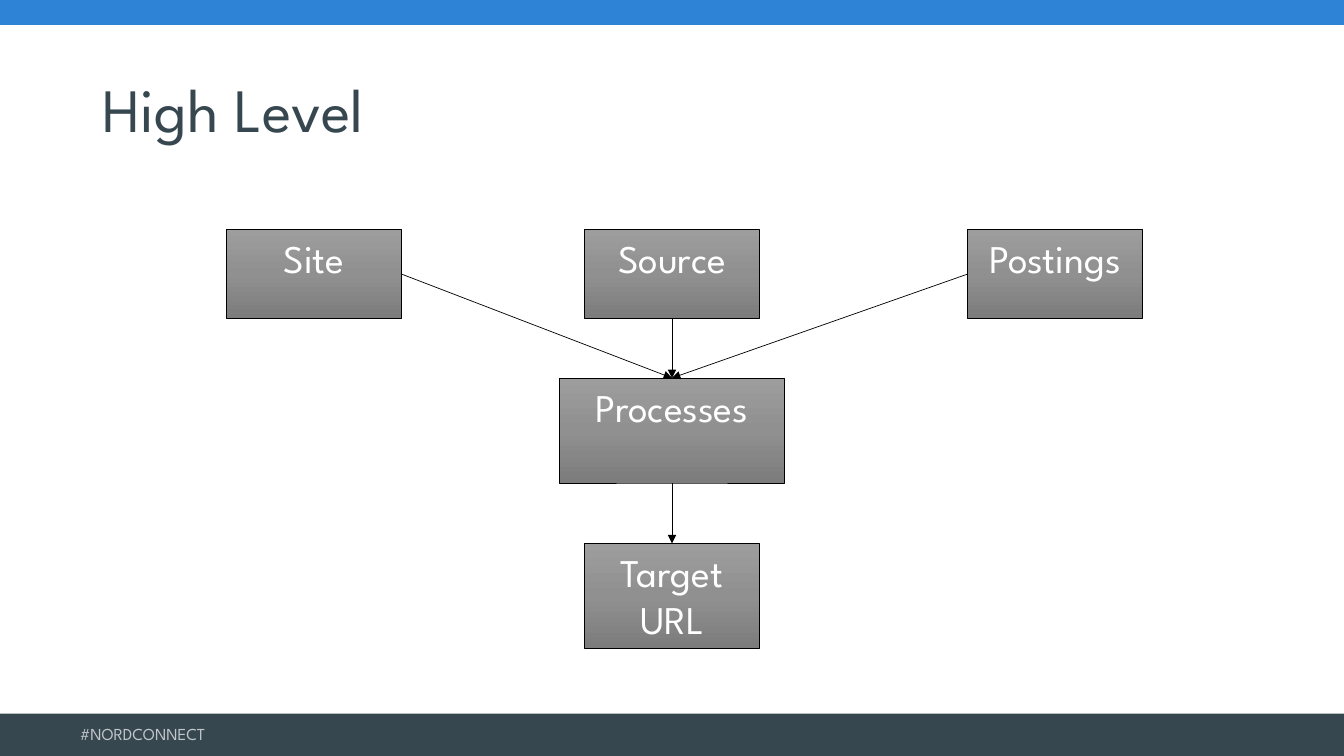
from copy import deepcopy
from pptx import Presentation
from pptx.dml.color import RGBColor
from pptx.enum.shapes import MSO_CONNECTOR as Line, MSO_SHAPE as Kind
from pptx.enum.text import MSO_ANCHOR as Anchor, PP_ALIGN as Align
from pptx.oxml.ns import qn
from pptx.oxml.xmlchemy import OxmlElement as Node
from pptx.util import Inches, Pt

WIDE, HIGH = 13.33, 7.5
FONT = "League Spartan"
GREYS = ("9D9D9D", "909090", "7C7C7C")
LEFT, MID, RIGHT = 3.115 / WIDE, 0.5, 10.465 / WIDE
TOP, CORE, BASE = 2.28 / HIGH, 0.5, 5.39 / HIGH
SLIM, BROAD = 0.13, 0.167
SHORT, TALL = 0.117, 0.139


def hue(code):
    return RGBColor.from_string(code)


def area(x, y, w, h):
    return [Inches(n) for n in (x * WIDE, y * HIGH, w * WIDE, h * HIGH)]


def style(frame, size, code, align, anchor):
    frame.word_wrap = True
    frame.vertical_anchor = anchor
    for para in frame.paragraphs:
        para.alignment = align
        for run in para.runs:
            run.font.name = FONT
            run.font.size = Pt(size)
            run.font.color.rgb = hue(code)


def add_rect(slide, x, y, w, h):
    rect = slide.shapes.add_shape(Kind.RECTANGLE, *area(x, y, w, h))
    rect.shadow.inherit = False
    return rect


def add_band(slide, y, h, code):
    band = add_rect(slide, 0, y, 1, h)
    band.fill.solid()
    band.fill.fore_color.rgb = hue(code)
    band.line.fill.background()


def add_tag(slide, text):
    tag = slide.shapes.add_textbox(*area(0.052, 0.944, 0.169, 0.053))
    tag.text_frame.text = text
    style(tag.text_frame, 12, "C3C7CA", Align.LEFT, Anchor.MIDDLE)


def set_title(slide, text):
    title = slide.shapes.title
    title.left, title.top, title.width, title.height = area(0.069, 0.053, 0.863, 0.193)
    title.text_frame.text = text
    title.text_frame.paragraphs[0].line_spacing = 0.9
    style(title.text_frame, 44, "37474F", Align.LEFT, Anchor.MIDDLE)


def shade(shape):
    shape.fill.gradient()
    shape.fill.gradient_angle = 270
    stops = shape._element.spPr.find(qn("a:gradFill")).find(qn("a:gsLst"))
    stops.insert(1, deepcopy(stops[0]))
    for i, stop in enumerate(shape.fill.gradient_stops):
        stop.position = i / 2
        stop.color.rgb = hue(GREYS[i])


def add_box(slide, text, x, y, w, h):
    box = add_rect(slide, x - w / 2, y, w, h)
    shade(box)
    box.line.color.rgb = hue("000000")
    box.line.width = Pt(0.5)
    box.text_frame.text = text
    style(box.text_frame, 28, "FFFFFF", Align.CENTER, Anchor.TOP)
    return box


def add_arrow(slide, start, side, end):
    arrow = slide.shapes.add_connector(Line.STRAIGHT, 0, 0, 0, 0)
    arrow.begin_connect(start, side)
    arrow.end_connect(end, 0)
    arrow.line.color.rgb = hue("000000")
    arrow.line.width = Pt(0.5)
    tip = Node("a:tailEnd")
    tip.set("type", "triangle")
    arrow.line._get_or_add_ln().append(tip)
    arrow._element.spPr.append(Node("a:effectLst"))


def main():
    deck = Presentation()
    deck.slide_width, deck.slide_height = Inches(WIDE), Inches(HIGH)
    slide = deck.slides.add_slide(deck.slide_layouts[5])
    add_band(slide, 0.944, 0.056, "37474F")
    add_band(slide, 0, 0.033, "2F83D6")
    add_tag(slide, "#NORDCONNECT")
    set_title(slide, "High Level")

    site = add_box(slide, "Site", LEFT, TOP, SLIM, SHORT)
    source = add_box(slide, "Source", MID, TOP, SLIM, SHORT)
    posts = add_box(slide, "Postings", RIGHT, TOP, SLIM, SHORT)
    work = add_box(slide, "Processes", MID, CORE, BROAD, TALL)
    target = add_box(slide, "Target\nURL", MID, BASE, SLIM, TALL)

    for start, side, end in (
        (site, 3, work),
        (source, 2, work),
        (posts, 1, work),
        (work, 2, target),
    ):
        add_arrow(slide, start, side, end)
    deck.save("out.pptx")


if __name__ == "__main__":
    main()
